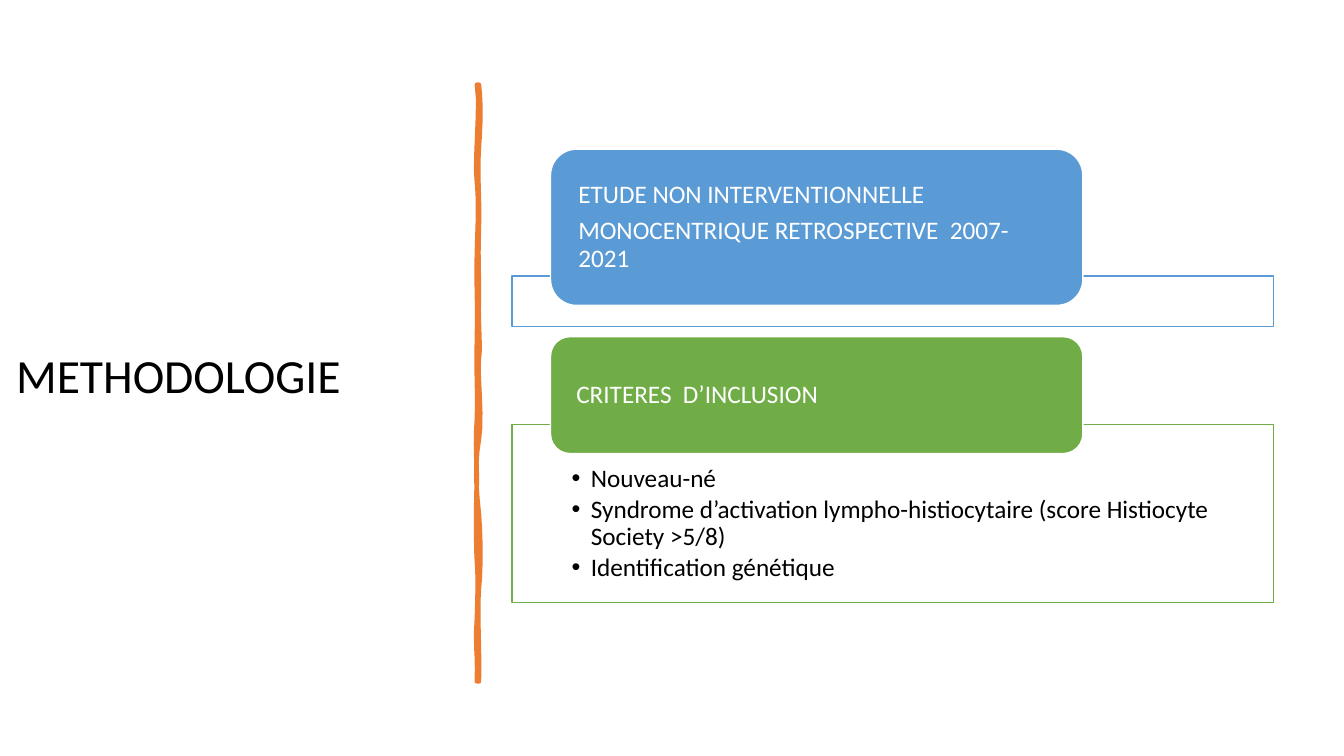
from dataclasses import dataclass

from pptx import Presentation
from pptx.dml.color import RGBColor
from pptx.enum.shapes import MSO_SHAPE
from pptx.enum.text import MSO_ANCHOR, MSO_AUTO_SIZE, PP_ALIGN
from pptx.oxml.ns import qn
from pptx.util import Pt


@dataclass(frozen=True)
class Theme:
    font: str = "Calibri"
    title_size: int = 34
    text_size: int = 18
    line_width: float = 1
    stroke_width: float = 3.25
    black: str = "000000"
    white: str = "FFFFFF"
    blue: str = "5B9BD5"
    green: str = "70AD47"
    orange: str = "ED7D31"


BRUSH = [
    (475, 84),
    (477, 102), (477, 119), (475, 146), (473, 173), (476, 195), (475, 226),
    (474, 257), (475, 262), (475, 294), (474, 325), (477, 342), (475, 356),
    (473, 370), (479, 414), (475, 436), (471, 457), (472, 484), (475, 510),
    (477, 536), (477, 564), (475, 584), (473, 603), (476, 650), (475, 676),
    (474, 676), (473, 676), (473, 676), (474, 646), (471, 644), (473, 613),
    (474, 583), (474, 570), (473, 557), (472, 544), (472, 495), (473, 477),
    (473, 459), (471, 445), (473, 415), (474, 386), (472, 373), (473, 335),
    (474, 298), (472, 281), (473, 250), (474, 218), (475, 200), (473, 181),
    (470, 163), (477, 104), (473, 84), (474, 84), (474, 84), (475, 84),
]


class Deck:
    """Builds one slide from lengths in px, at 100 px to the inch."""

    SCALE = 9144

    def __init__(self, theme, width, height):
        self.theme = theme
        self.prs = Presentation()
        self.prs.slide_width, self.prs.slide_height = self.px(width, height)
        self.s = self.prs.slides.add_slide(self.prs.slide_layouts[1])

    def px(self, *lengths):
        return [round(n * self.SCALE) for n in lengths]

    def place(self, sp, box):
        sp.left, sp.top, sp.width, sp.height = self.px(*box)

    def paint(self, sp, fill, line, width, alpha=None):
        sp.fill.solid()
        sp.fill.fore_color.rgb = RGBColor.from_string(fill)
        if alpha:
            color = sp._element.spPr.find(qn("a:solidFill"))[0]
            color.append(color.makeelement(qn("a:alpha"), {"val": str(alpha * 1000)}))
        sp.line.color.rgb = RGBColor.from_string(line)
        sp.line.width = Pt(width)

    def set_text(self, sp, lines, size, color, anchor, insets, after=0):
        tf = sp.text_frame
        tf.text = "\n".join(lines)
        tf.word_wrap = True
        tf.auto_size = MSO_AUTO_SIZE.NONE
        tf.vertical_anchor = anchor
        (tf.margin_left, tf.margin_top,
         tf.margin_right, tf.margin_bottom) = self.px(*insets)
        for p in tf.paragraphs:
            p.alignment = PP_ALIGN.LEFT
            p.line_spacing = 0.9
            p.space_before = Pt(0)
            p.space_after = Pt(after)
            for r in p.runs:
                r.font.name = self.theme.font
                r.font.size = Pt(size)
                r.font.color.rgb = RGBColor.from_string(color)

    def title(self, text, box):
        sp = self.s.shapes.title
        self.place(sp, box)
        self.set_text(sp, [text], self.theme.title_size, self.theme.black,
                      MSO_ANCHOR.MIDDLE, (10, 5, 10, 5))

    def bullets(self, lines, box, color):
        sp = self.s.placeholders[1]
        self.place(sp, box)
        self.paint(sp, self.theme.white, color, self.theme.line_width, 90)
        self.set_text(sp, lines, self.theme.text_size, self.theme.black,
                      MSO_ANCHOR.TOP, (59, 41, 59, 14), 2.7)
        indent, = self.px(19)
        for p in sp.text_frame.paragraphs:
            pPr = p._p.get_or_add_pPr()
            pPr.set("marL", str(indent))
            pPr.set("indent", str(-indent))

    def shape(self, kind, box, fill, line, alpha=None):
        sp = self.s.shapes.add_shape(kind, *self.px(*box))
        sp.shadow.inherit = False
        self.paint(sp, fill, line, self.theme.line_width, alpha)
        return sp

    def frame(self, box, color):
        self.shape(MSO_SHAPE.RECTANGLE, box, self.theme.white, color, 90)

    def header(self, lines, box, color):
        sp = self.shape(MSO_SHAPE.ROUNDED_RECTANGLE, box, color, self.theme.white)
        self.set_text(sp, lines, self.theme.text_size, self.theme.white,
                      MSO_ANCHOR.MIDDLE, (20, 0, 20, 0), 6.3)

    def brush(self, points, color, steps=6):
        outline = []
        for i in range(0, len(points) - 1, 3):
            for k in range(1, steps + 1):
                t = k / steps
                weights = ((1 - t) ** 3, 3 * t * (1 - t) ** 2,
                           3 * t ** 2 * (1 - t), t ** 3)
                curve = list(zip(weights, points[i:i + 4]))
                outline.append(self.px(sum(w * x for w, (x, y) in curve),
                                       sum(w * y for w, (x, y) in curve)))
        builder = self.s.shapes.build_freeform(*self.px(*points[0]))
        builder.add_line_segments(outline, close=True)
        sp = builder.convert_to_shape()
        sp.shadow.inherit = False
        self.paint(sp, color, color, self.theme.stroke_width)


def main():
    theme = Theme()
    deck = Deck(theme, 1333, 750)
    deck.title("METHODOLOGIE", (6, 70, 345, 611))
    deck.bullets([
        "Nouveau-né",
        "Syndrome d’activation lympho-histiocytaire (score Histiocyte Society >5/8)",
        "Identification génétique",
    ], (508, 421, 755, 177), theme.green)
    deck.brush(BRUSH, theme.orange)
    deck.frame((508, 274, 755, 50), theme.blue)
    deck.header(["ETUDE NON INTERVENTIONNELLE",
                 "MONOCENTRIQUE RETROSPECTIVE  2007-2021"],
                (546, 148, 528, 155), theme.blue)
    deck.header(["CRITERES  D’INCLUSION"], (546, 334, 528, 116), theme.green)
    deck.prs.save("out.pptx")


if __name__ == "__main__":
    main()
